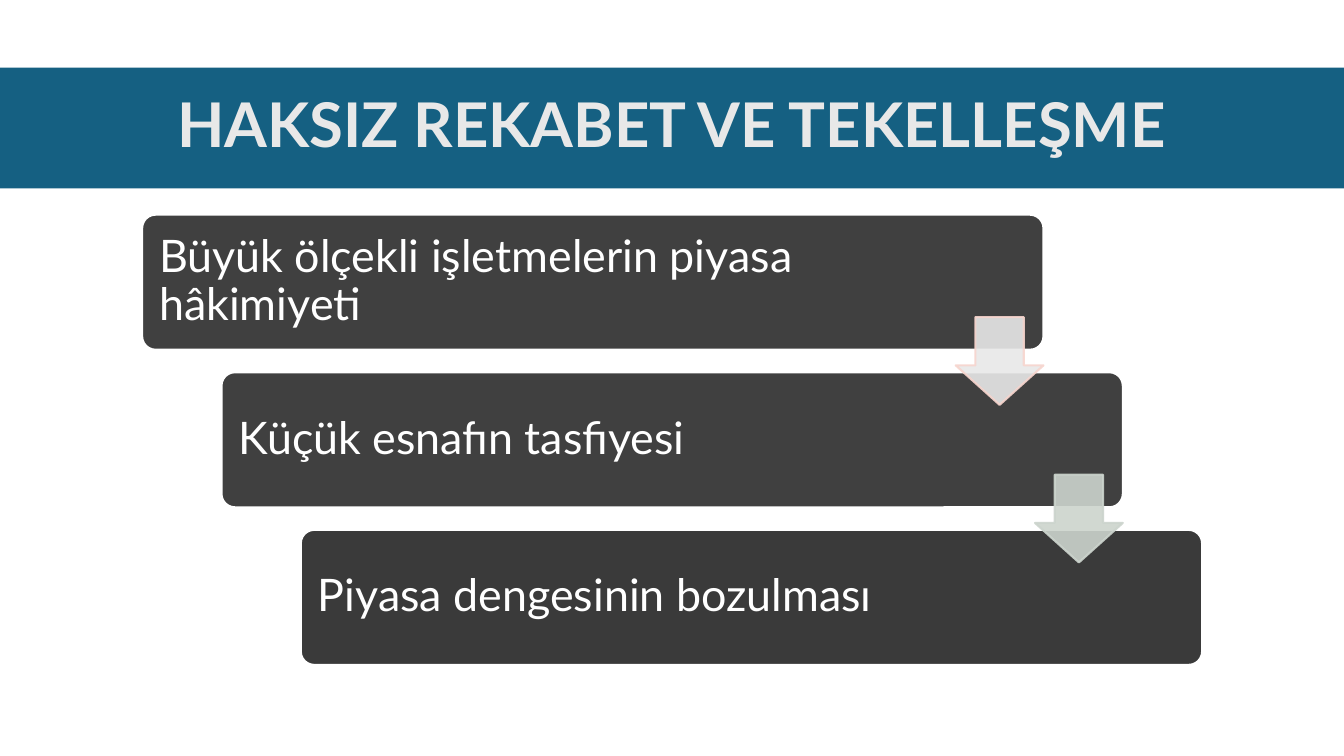
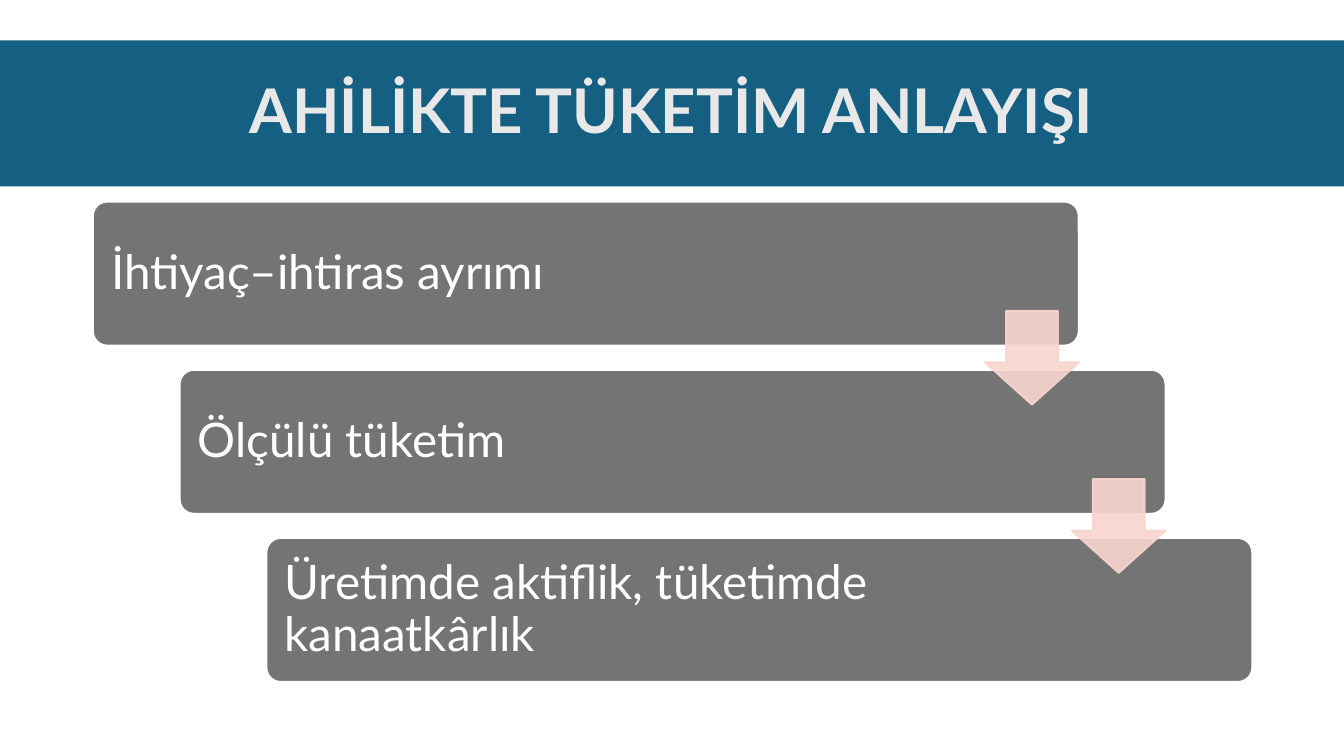
from pptx import Presentation
from pptx.dml.color import RGBColor as RGB
from pptx.enum.shapes import MSO_SHAPE as Kind
from pptx.enum.text import MSO_ANCHOR as Anchor, PP_ALIGN as Align
from pptx.oxml import parse_xml
from pptx.oxml.ns import nsdecls
from pptx.util import Inches, Pt

BLUE = RGB(0x15, 0x60, 0x82)
PALE = RGB(0xE8, 0xE8, 0xE8)
WHITE = RGB(0xFF, 0xFF, 0xFF)
DARK = RGB(0x40, 0x40, 0x40)
DEEP = RGB(0x3A, 0x3A, 0x3A)
GREY = RGB(0x74, 0x74, 0x74)
ROSE = RGB(0xF7, 0xD5, 0xCE)
SAGE = RGB(0xCC, 0xD4, 0xCD)

FONT = "Lato"
WIDE, HIGH = 13.33, 7.5
PITCH = 7 / 6     # step to step, in step heights
SHIFT = 0.088     # indent of each step, in step widths
ARROW = 0.65      # arrow side, in step heights
KEEP = 0.2        # share of a step kept free for the arrow

# band: top, height; step: left, top, width, height
# steps: text, fill; arrows: fill, line
SLIDES = [
    dict(title="HAKSIZ REKABET VE TEKELLEŞME", band=(0.67, 1.2),
         step=(1.41, 2.13, 8.94, 1.34), size=32, inset=0.13,
         steps=[("Büyük ölçekli işletmelerin piyasa hâkimiyeti", DARK),
                ("Küçük esnafın tasfiyesi", DARK),
                ("Piyasa dengesinin bozulması", DEEP)],
         arrows=[(PALE, ROSE), (SAGE, SAGE)]),
    dict(title="AHİLİKTE TÜKETİM ANLAYIŞI", band=(0.4, 1.45),
         step=(0.92, 2, 9.78, 1.43), size=34, inset=0.14,
         steps=[("İhtiyaç–ihtiras ayrımı", GREY),
                ("Ölçülü tüketim", GREY),
                ("Üretimde aktiflik, tüketimde kanaatkârlık", GREY)],
         arrows=[(ROSE, ROSE), (ROSE, ROSE)]),
]


def draw(kind, box, fill, line=None, adjust=()):
    """Add a flat shape to the current slide; box is in inches."""
    shape = slide.shapes.add_shape(kind, *map(Inches, box))
    shape.shadow.inherit = False
    shape.fill.solid()
    shape.fill.fore_color.rgb = fill
    if line is None:
        shape.line.fill.background()
    else:
        shape.line.color.rgb = line
        shape.line.width = Pt(1.5)
    for i, value in enumerate(adjust):
        shape.adjustments[i] = value
    return shape


def write(shape, text, size, color, align, bold=False):
    frame = shape.text_frame
    frame.word_wrap = True
    frame.vertical_anchor = Anchor.MIDDLE
    para = frame.paragraphs[0]
    para.text = text
    para.alignment = align
    para.line_spacing = 0.9
    font = para.font
    font.name, font.size, font.bold = FONT, Pt(size), bold
    font.color.rgb = color
    return frame


deck = Presentation()
deck.slide_width, deck.slide_height = Inches(WIDE), Inches(HIGH)
blank = deck.slide_layouts[6]

for page in SLIDES:
    slide = deck.slides.add_slide(blank)
    top, height = page["band"]
    band = draw(Kind.RECTANGLE, (0, top, WIDE, height), BLUE)
    write(band, page["title"], 44, PALE, Align.CENTER, bold=True)

    left, top, width, height = page["step"]
    for i, (text, fill) in enumerate(page["steps"]):
        box = (left + i * SHIFT * width, top + i * PITCH * height, width, height)
        step = draw(Kind.ROUNDED_RECTANGLE, box, fill, WHITE, [0.1])
        frame = write(step, text, page["size"], WHITE, Align.LEFT)
        frame.margin_left = frame.margin_top = frame.margin_bottom = Inches(page["inset"])
        frame.margin_right = Inches(KEEP * width)

    # Each arrow ends flush with its step and is centred on the gap below it.
    side = ARROW * height
    for i, (fill, line) in enumerate(page["arrows"]):
        right = left + width + i * SHIFT * width
        middle = top + (i * PITCH + (1 + PITCH) / 2) * height
        box = (right - side, middle - side / 2, side, side)
        arrow = draw(Kind.DOWN_ARROW, box, fill, line, [0.55, 0.45])
        for color in arrow.element.spPr.xpath(".//a:srgbClr"):
            color.append(parse_xml(f'<a:alpha {nsdecls("a")} val="90000"/>'))

deck.save("out.pptx")
